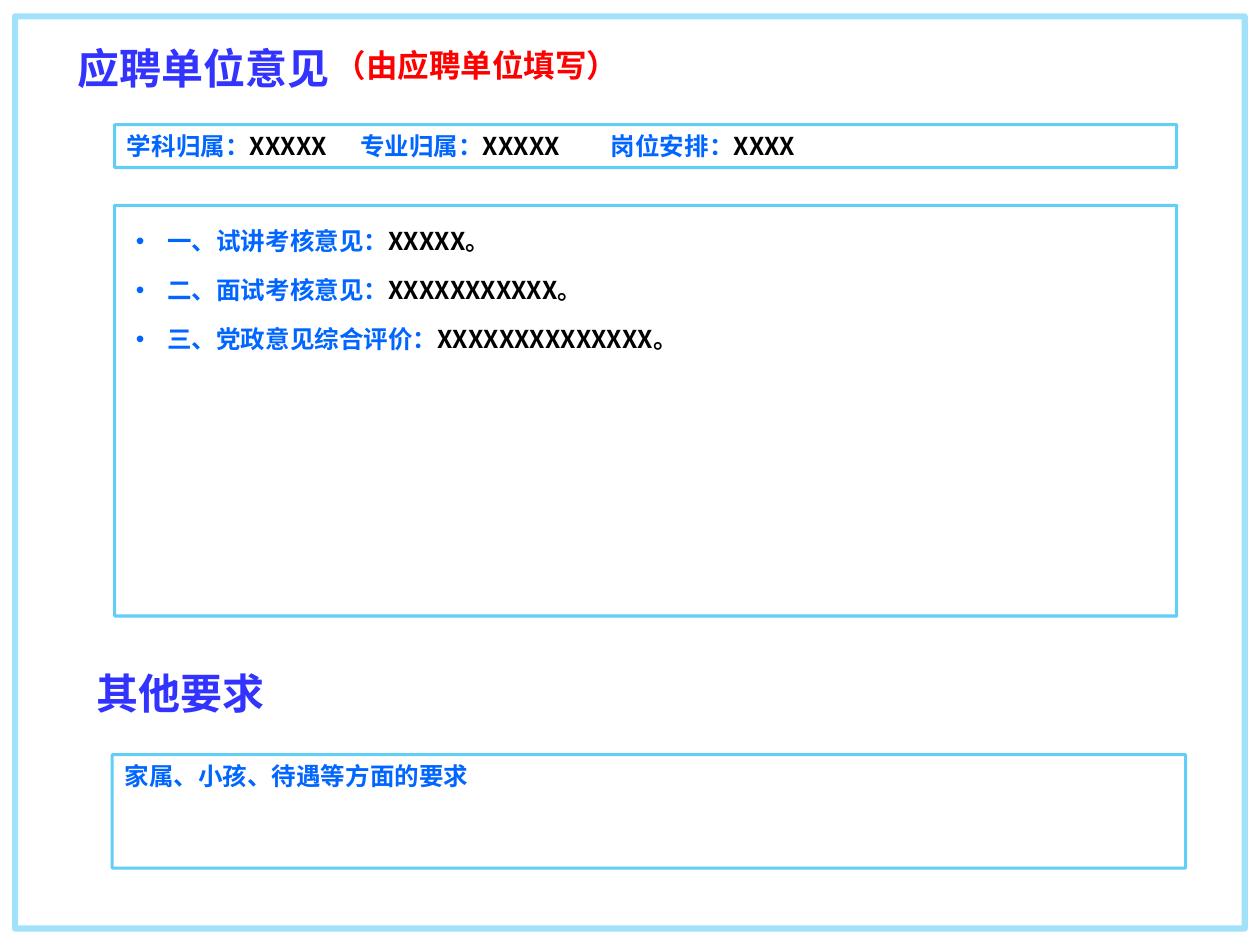
"""Build the slide with the employer's opinion and other requirements."""
from dataclasses import dataclass

from lxml.etree import SubElement
from pptx import Presentation
from pptx.dml.color import RGBColor
from pptx.enum.shapes import MSO_SHAPE
from pptx.enum.text import MSO_ANCHOR, PP_ALIGN
from pptx.oxml.ns import qn
from pptx.util import Inches, Pt

FONT = "Noto Sans CJK SC"
INDIGO, RED, BLUE, BLACK, SKY = "3333FF", "FF0000", "0066FF", "000000", "00B0F0"


@dataclass
class Box:
    left: float
    top: float
    width: float
    height: float


@dataclass
class Span:
    text: str
    color: str
    size: int = 14


@dataclass
class Heading:
    box: Box
    span: Span


HEADINGS = [
    Heading(Box(0.52, 0.29, 5.04, 0.5), Span("应聘单位意见", INDIGO, 24)),
    Heading(Box(0.67, 5.25, 5.04, 0.5), Span("其他要求", INDIGO, 24)),
    Heading(Box(2.56, 0.32, 3.62, 0.4), Span("（由应聘单位填写）", RED, 18)),
]
POST = [
    Span("学科归属：", BLUE), Span("XXXXX\t", BLACK),
    Span("专业归属：", BLUE), Span("XXXXX\t", BLACK),
    Span("岗位安排：", BLUE), Span("XXXX", BLACK),
]
POST_TABS = [1.85, 3.84]
OPINIONS = [
    [Span("一、试讲考核意见：", BLUE), Span("XXXXX。", BLACK)],
    [Span("二、面试考核意见：", BLUE), Span("XXXXXXXXXXX。", BLACK)],
    [Span("三、党政意见综合评价：", BLUE), Span("XXXXXXXXXXXXXX。", BLACK)],
]


def rgb(color: str) -> RGBColor:
    """Turn a hex string into a colour."""
    return RGBColor.from_string(color)


def place(box: Box) -> list:
    """Return the box as four lengths."""
    return [Inches(v) for v in (box.left, box.top, box.width, box.height)]


def add_frame(slide, box: Box, width: float, opacity: int):
    """Draw an unfilled rectangle with a translucent outline."""
    s = slide.shapes.add_shape(MSO_SHAPE.RECTANGLE, *place(box))
    s.shadow.inherit = False
    s.fill.background()
    s.line.color.rgb = rgb(SKY)
    s.line.width = Pt(width)
    color = s.line._get_or_add_ln().find(f".//{qn('a:srgbClr')}")
    SubElement(color, qn("a:alpha"), val=str(opacity * 1000))
    return s


def add_tabs(p, stops: list[float]) -> None:
    """Give a paragraph left tab stops."""
    tabs = SubElement(p._p.get_or_add_pPr(), qn("a:tabLst"))
    for stop in stops:
        SubElement(tabs, qn("a:tab"), pos=str(Inches(stop)), algn="l")


def add_bullet(p, indent: float) -> None:
    """Give a paragraph a hanging round bullet."""
    pPr = p._p.get_or_add_pPr()
    pPr.set("marL", str(Inches(indent)))
    pPr.set("indent", str(-Inches(indent)))
    SubElement(pPr, qn("a:buFont"), typeface="Arial")
    SubElement(pPr, qn("a:buChar"), char="•")


def write(p, spans: list[Span]) -> None:
    """Add bold coloured runs to a paragraph."""
    for span in spans:
        r = p.add_run()
        r.text = span.text
        r.font.name = FONT
        r.font.size = Pt(span.size)
        r.font.bold = True
        r.font.color.rgb = rgb(span.color)
        SubElement(r._r.get_or_add_rPr(), qn("a:ea"), typeface=FONT)


def open_text(s):
    """Prepare the text frame of a shape and return its first paragraph."""
    tf = s.text_frame
    tf.word_wrap = True
    tf.vertical_anchor = MSO_ANCHOR.TOP
    p = tf.paragraphs[0]
    p.alignment = PP_ALIGN.LEFT
    return p


def add_opinions(slide, box: Box) -> None:
    """Write the bulleted list of opinions."""
    tb = slide.shapes.add_textbox(*place(box))
    p = open_text(tb)
    for i, spans in enumerate(OPINIONS):
        if i:
            p = tb.text_frame.add_paragraph()
            p.space_before = Pt(2.8)
        p.alignment = PP_ALIGN.JUSTIFY
        p.line_spacing = 1.5
        add_bullet(p, 0.25)
        write(p, spans)


def main() -> None:
    """Build and save the slide."""
    prs = Presentation()
    prs.slide_width, prs.slide_height = Inches(10), Inches(7.5)
    slide = prs.slides.add_slide(prs.slide_layouts[6])

    add_frame(slide, Box(0.12, 0.13, 9.76, 7.24), 3.5, 37)
    for heading in HEADINGS:
        tb = slide.shapes.add_textbox(*place(heading.box))
        write(open_text(tb), [heading.span])

    p = open_text(add_frame(slide, Box(0.91, 0.99, 8.43, 0.34), 1.75, 62))
    add_tabs(p, POST_TABS)
    write(p, POST)

    add_frame(slide, Box(0.91, 1.63, 8.43, 3.26), 1.75, 62)
    family = add_frame(slide, Box(0.89, 5.99, 8.52, 0.9), 1.75, 62)
    write(open_text(family), [Span("家属、小孩、待遇等方面的要求", BLUE)])
    add_opinions(slide, Box(0.98, 1.63, 8.11, 1.26))

    prs.save("out.pptx")


if __name__ == "__main__":
    main()
